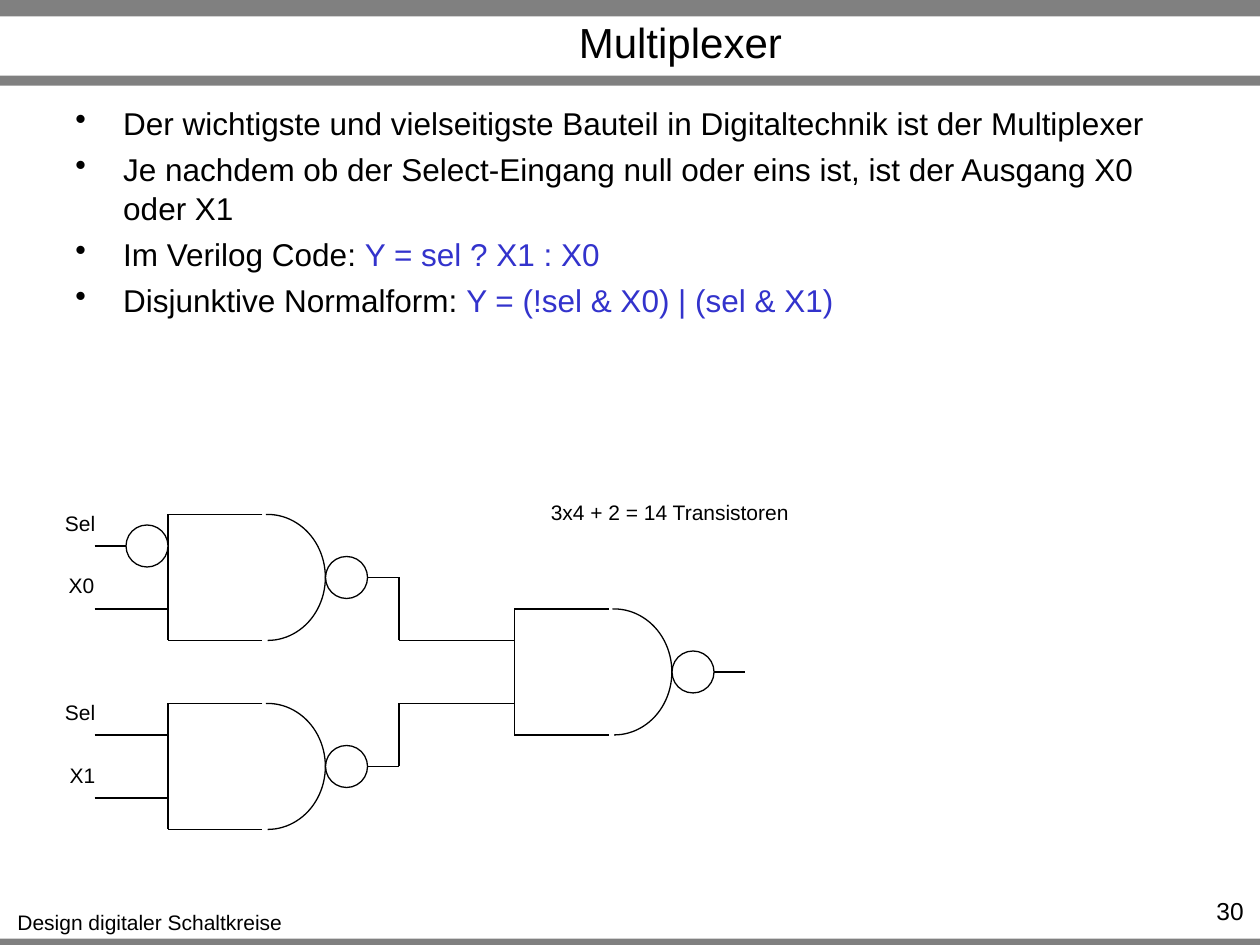
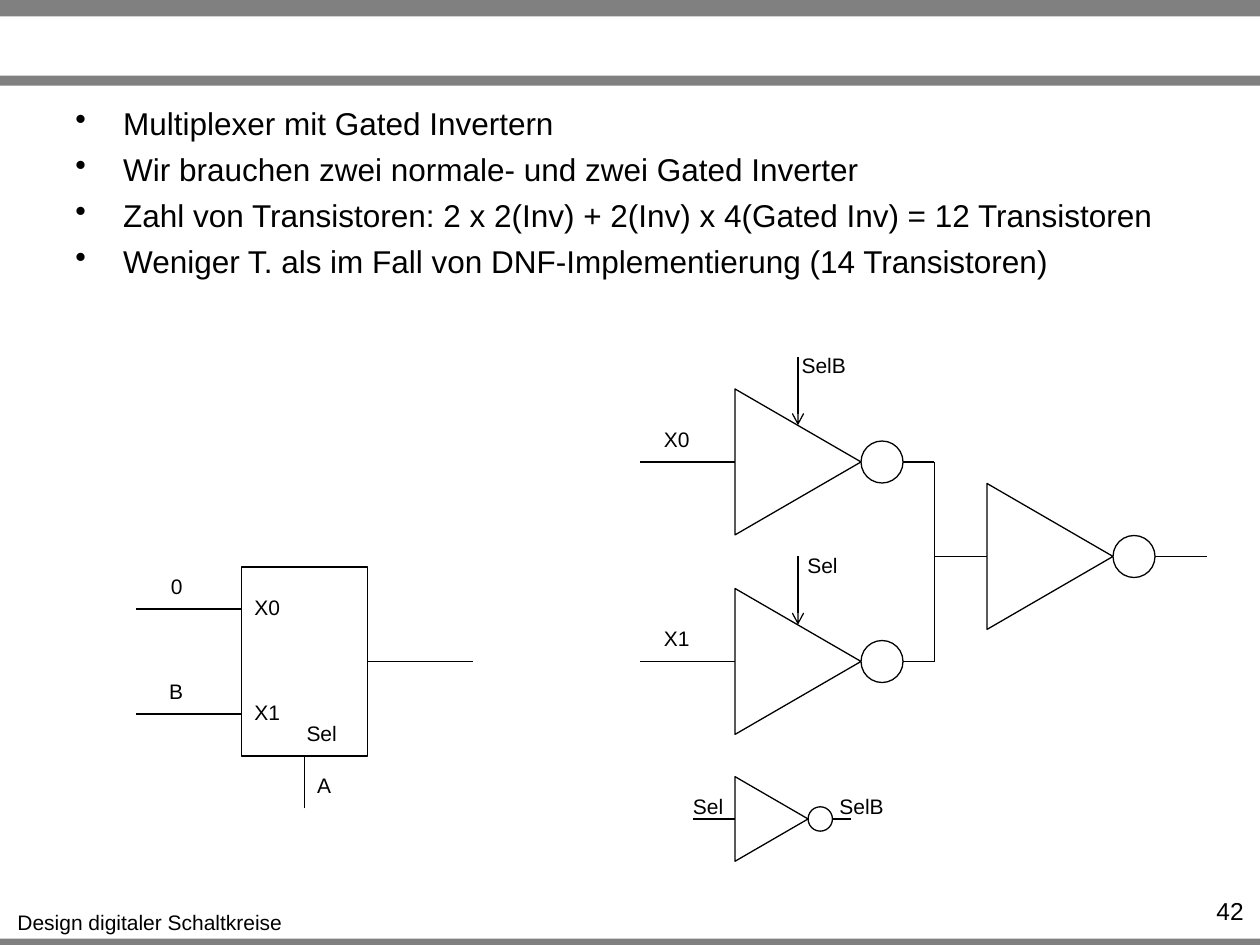
from dataclasses import dataclass

from lxml.etree import SubElement
from pptx import Presentation
from pptx.dml.color import RGBColor
from pptx.enum.shapes import MSO_CONNECTOR, MSO_SHAPE
from pptx.enum.text import MSO_ANCHOR, PP_ALIGN
from pptx.oxml.ns import qn
from pptx.util import Inches, Pt


@dataclass(frozen=True)
class Theme:
    font: str = "Arial"
    ink: str = "000000"
    code: str = "3333CC"
    paper: str = "FFFFFF"
    band: str = "808080"
    title: int = 24
    body: int = 18
    number: int = 14
    label: int = 12
    line: float = 0.75
    indent: float = 0.38


T = Theme()
W, H = 10, 7.5
UNIT = 1 / 12  # drawing grid, in inches

FOOTER = "Design digitaler Schaltkreise"
BANDS = [(0, 0.13), (0.6, 0.08), (7.45, 0.05)]  # top, height

# A bullet is a list of (text, colour) runs.
MUX_BULLETS = [
    [("Der wichtigste und vielseitigste Bauteil in Digitaltechnik ist der Multiplexer", T.ink)],
    [("Je nachdem ob der Select-Eingang null oder eins ist, ist der Ausgang X0 oder X1", T.ink)],
    [("Im Verilog Code: ", T.ink), ("Y = sel ? X1 : X0", T.code)],
    [("Disjunktive Normalform: ", T.ink), ("Y = (!sel & X0) | (sel & X1)", T.code)],
]
GATED_BULLETS = [
    [("Multiplexer mit Gated Invertern", T.ink)],
    [("Wir brauchen zwei normale- und zwei Gated Inverter", T.ink)],
    [("Zahl von Transistoren: 2 x 2(Inv) + 2(Inv) x 4(Gated Inv) = 12 Transistoren", T.ink)],
    [("Weniger T. als im Fall von DNF-Implementierung (14 Transistoren)", T.ink)],
]

# Labels: text, column, row on the drawing grid; widths in inches.
COUNT = "3x4 + 2 = 14 Transistoren"
LABEL_WIDTHS = {"Sel": 0.44, "SelB": 0.56, "X0": 0.41, "X1": 0.41,
                "A": 0.31, "B": 0.31, "0": 0.29, COUNT: 2.1}
MUX_LABELS = [("Sel", 5, 48), ("X0", 5.3, 53.9), ("Sel", 5, 66), ("X1", 5.4, 72),
              (COUNT, 51.2, 47)]
GATED_LABELS = [
    ("X0", 23, 56), ("X1", 23, 66), ("Sel", 28, 68), ("A", 29, 73), ("0", 15.1, 54),
    ("B", 14.9, 64), ("SelB", 75.1, 33), ("Sel", 75.7, 52), ("X0", 62, 40),
    ("X1", 62, 59), ("Sel", 64.8, 75), ("SelB", 78.7, 75),
]

NAND_GATES = [(16, 49), (16, 67), (49, 58)]  # left, top
NAND_WIRES = [[(38, 55), (38, 61), (42, 61)], [(38, 73), (38, 67), (42, 67)]]

# Inverters: left, middle row, scale, start of input wire, end of output wire
INVERTERS = [(70, 44, 1, 61, 89), (70, 63, 1, 61, 89),
             (94, 53, 1, 89, 115), (70, 78, 0.58, 66, 81)]
GATED_ROWS = [44, 63]


def u(n):
    return Inches(n * UNIT)


def text(s, box, paragraphs, size, align=PP_ALIGN.CENTER, wrap=True, anchor=MSO_ANCHOR.TOP):
    """Add a text box; each paragraph is a list of (text, colour) runs."""
    tf = s.shapes.add_textbox(*map(Inches, box)).text_frame
    for name, value in {"word_wrap": wrap, "vertical_anchor": anchor}.items():
        setattr(tf, name, value)
    for i, runs in enumerate(paragraphs):
        p = tf.add_paragraph() if i else tf.paragraphs[0]
        p.alignment = align
        for content, colour in runs:
            r = p.add_run()
            r.text = content
            for name, value in {"name": T.font, "size": Pt(size)}.items():
                setattr(r.font, name, value)
            r.font.color.rgb = RGBColor.from_string(colour)
    return tf


def bullets(s, items):
    tf = text(s, (0.5, 0.76, 9, 0.74), items, T.body, PP_ALIGN.LEFT)
    for i, p in enumerate(tf.paragraphs):
        p.line_spacing = 1.05
        p.space_before = Pt(0.2 * T.body if i else 0)
        pPr = p._p.get_or_add_pPr()
        pPr.set("marL", str(Inches(T.indent)))
        pPr.set("indent", str(-Inches(T.indent)))
        SubElement(pPr, qn("a:buChar")).set("char", "•")


def shape(s, kind, x, y, w, h, fill=None, line=T.ink):
    """Add a preset shape placed in grid units."""
    sp = s.shapes.add_shape(kind, u(x), u(y), u(w), u(h))
    sp.shadow.inherit = False
    if fill:
        sp.fill.solid()
        sp.fill.fore_color.rgb = RGBColor.from_string(fill)
    else:
        sp.fill.background()
    if line:
        sp.line.color.rgb = RGBColor.from_string(line)
        sp.line.width = Pt(T.line)
    else:
        sp.line.fill.background()
    return sp


def wire(s, *points, arrow=False):
    """Join the points with straight lines and return the last one."""
    for start, end in zip(points, points[1:]):
        c = s.shapes.add_connector(MSO_CONNECTOR.STRAIGHT, *map(u, start + end))
        c.line.color.rgb = RGBColor.from_string(T.ink)
        c.line.width = Pt(T.line)
        if arrow:
            SubElement(c.line._get_or_add_ln(), qn("a:tailEnd")).set("type", "arrow")
        SubElement(c._element.spPr, qn("a:effectLst"))
    return c


def bubble(s, x, middle, d=4):
    shape(s, MSO_SHAPE.OVAL, x, middle - d / 2, d, d, T.paper)


def nand(s, x, y):
    w, h, out = 9, 12, 15
    for row in (y + 3, y + 9):
        wire(s, (x - 7, row), (x, row))
    wire(s, (x + w, y), (x, y), (x, y + h), (x + w, y + h))
    arc = shape(s, MSO_SHAPE.ARC, x + 4, y, 11, h)
    for i, degrees in enumerate((268.5, 90)):
        arc.adjustments[i] = degrees * 0.6
    wire(s, (x + out, y + h / 2), (x + 22, y + h / 2))
    bubble(s, x + out, y + h / 2)


def inverter(s, x, middle, scale, x_in, x_out):
    w, h = 12 * scale, 13.9 * scale
    wire(s, (x_in, middle), (x, middle))
    wire(s, (x + w, middle), (x_out, middle))
    tri = shape(s, MSO_SHAPE.ISOSCELES_TRIANGLE, x + (w - h) / 2, middle - w / 2, h, w)
    tri.rotation = 90
    bubble(s, x + w, middle, 4 * scale)


def labels(s, items):
    for content, x, y in items:
        text(s, (x * UNIT, y * UNIT, LABEL_WIDTHS[content], 0.3),
             [[(content, T.ink)]], T.label, wrap=False)


def new_slide(prs, number, items, title=None):
    s = prs.slides.add_slide(prs.slide_layouts[6])
    for top, height in BANDS:
        shape(s, MSO_SHAPE.RECTANGLE, 0, top / UNIT, W / UNIT, height / UNIT, T.band, None)
    text(s, (0.03, 7.17, 2.32, 0.3), [[(FOOTER, T.ink)]], T.label, wrap=False)
    if title:
        text(s, (1.3, 0.14, 8.2, 0.38), [[(title, T.ink)]], T.title, anchor=MSO_ANCHOR.MIDDLE)
    bullets(s, items)
    text(s, (9.1, 7.06, 0.87, 0.24), [[(number, T.ink)]], T.number, PP_ALIGN.RIGHT)
    return s


def mux_slide(prs):
    s = new_slide(prs, "30", MUX_BULLETS, "Multiplexer")
    for x, y in NAND_GATES:
        nand(s, x, y)
    for points in NAND_WIRES:
        wire(s, *points)
    x, y = NAND_GATES[0]
    bubble(s, x - 4, y + 3)
    labels(s, MUX_LABELS)


def gated_slide(prs):
    s = new_slide(prs, "42", GATED_BULLETS)
    x, y, w, h = 23, 54, 12, 18
    mux = shape(s, MSO_SHAPE.RECTANGLE, x, y, w, h)
    for row in (58, 68):
        wire(s, (x - 10, row), (x, row))
    wire(s, (x + w, y + h / 2), (x + w + 10, y + h / 2)).begin_connect(mux, 3)
    wire(s, (x + w / 2, y + h + 5), (x + w / 2, y + h)).end_connect(mux, 2)
    for spec_row in INVERTERS:
        inverter(s, *spec_row)
    wire(s, *[(89, row) for row in GATED_ROWS])
    for row in GATED_ROWS:
        wire(s, (76, row - 10), (76, row - 3.5), arrow=True)
    labels(s, GATED_LABELS)


def main():
    prs = Presentation()
    prs.slide_width, prs.slide_height = Inches(W), Inches(H)
    mux_slide(prs)
    gated_slide(prs)
    prs.save("out.pptx")


if __name__ == "__main__":
    main()
